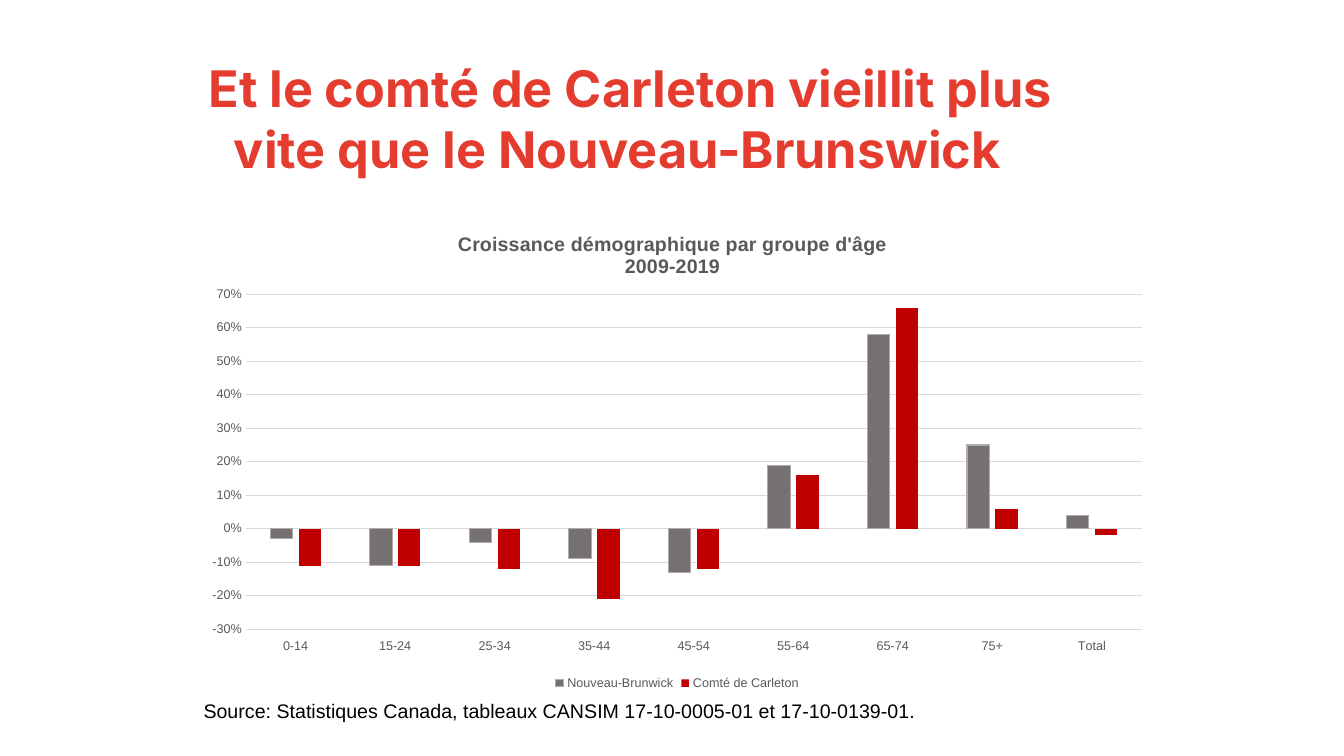
from lxml import etree
from pptx import Presentation
from pptx.chart import data as chart_data
from pptx.dml import color
from pptx.enum import chart as chart_enum, text as text_enum
from pptx.oxml import ns
from pptx.util import Cm, Pt

RED, GREY, LIGHT_GREY = "E43D30", "595959", "D9D9D9"
AGE_GROUPS = ["0-14", "15-24", "25-34", "35-44", "45-54", "55-64", "65-74", "75+", "Total"]
# name, fill, outline, growth 2009-2019
REGIONS = [
    ("Nouveau-Brunwick", "767171", "AFABAB",
     [-0.03, -0.11, -0.04, -0.09, -0.13, 0.19, 0.58, 0.25, 0.04]),
    ("Comté de Carleton", "C00000", None,
     [-0.11, -0.11, -0.12, -0.21, -0.12, 0.16, 0.66, 0.06, -0.02]),
]


def rgb(value):
    return color.RGBColor.from_string(value)


def style_font(font, name, size, colour, bold=False):
    font.name, font.size, font.bold = name, Pt(size), bold
    font.color.rgb = rgb(colour)


def style_line(line, colour):
    line.color.rgb = rgb(colour)
    line.width = Pt(0.75)


def add_run(paragraph, words, name, size, colour, bold=False):
    run = paragraph.add_run()
    run.text = words
    style_font(run.font, name, size, colour, bold)


def set_layout(parent, position, **values):
    """Place a chart part by fractions of the chart area."""
    for old in parent.findall(ns.qn("c:layout")):
        parent.remove(old)
    layout = etree.Element(ns.qn("c:layout"))
    manual = etree.SubElement(layout, ns.qn("c:manualLayout"))
    for tag, value in values.items():
        etree.SubElement(manual, ns.qn(f"c:{tag}")).set("val", str(value))
    parent.insert(position, layout)


def add_title(slide, words):
    title = slide.shapes.title
    title.left, title.top, title.width, title.height = Cm(4.37), Cm(1.32), Cm(24.66), Cm(3.94)
    frame = title.text_frame
    frame.word_wrap = True
    frame.auto_size = text_enum.MSO_AUTO_SIZE.NONE
    frame.vertical_anchor = text_enum.MSO_ANCHOR.TOP
    paragraph = frame.paragraphs[0]
    paragraph.alignment = text_enum.PP_ALIGN.LEFT
    # Hanging indent
    properties = paragraph._p.get_or_add_pPr()
    properties.set("marL", str(Cm(1.27)))
    properties.set("indent", str(-Cm(0.64)))
    add_run(paragraph, words, "Inter", 36, RED, bold=True)


def add_source(slide, words):
    box = slide.shapes.add_textbox(Cm(4.88), Cm(17.48), Cm(23.77), Cm(0.86))
    box.text_frame.word_wrap = True
    add_run(box.text_frame.paragraphs[0], words, "Arial", 14, "000000")


def add_chart_title(chart, lines):
    frame = chart.chart_title.text_frame
    for index, line in enumerate(lines):
        paragraph = frame.add_paragraph() if index else frame.paragraphs[0]
        paragraph.alignment = text_enum.PP_ALIGN.CENTER
        add_run(paragraph, line, "Arial", 14, GREY, bold=True)
    chart.chart_title.include_in_layout = False
    set_layout(chart.chart_title._element, 1, xMode="edge", yMode="edge", x=0.27, y=0.04)


def style_axes(chart):
    for axis in (chart.category_axis, chart.value_axis):
        axis.major_tick_mark = axis.minor_tick_mark = chart_enum.XL_TICK_MARK.NONE
        style_font(axis.tick_labels.font, "Arial", 9, GREY)
    chart.category_axis.tick_label_position = chart_enum.XL_TICK_LABEL_POSITION.LOW
    style_line(chart.category_axis.format.line, LIGHT_GREY)
    values = chart.value_axis
    values.minimum_scale, values.maximum_scale, values.major_unit = -0.3, 0.7, 0.1
    values.tick_labels.number_format = "0%"
    values.tick_labels.number_format_is_linked = False
    values.format.line.fill.background()
    style_line(values.major_gridlines.format.line, LIGHT_GREY)


def add_growth_chart(slide):
    data = chart_data.CategoryChartData(number_format="0%")
    data.categories = AGE_GROUPS
    for name, _, _, growth in REGIONS:
        data.add_series(name, growth)
    chart = slide.shapes.add_chart(
        chart_enum.XL_CHART_TYPE.COLUMN_CLUSTERED,
        Cm(4.88), Cm(5.26), Cm(24.38), Cm(12.24), data).chart
    style_font(chart.font, "Arial", 10, "000000")
    add_chart_title(chart, ["Croissance démographique par groupe d'âge", "2009-2019"])
    style_axes(chart)

    # Columns
    plot = chart.plots[0]
    plot.gap_width, plot.overlap, plot.vary_by_categories = 219, -27, False
    for series, (_, fill, outline, _) in zip(plot.series, REGIONS):
        series.invert_if_negative = False
        series.format.fill.solid()
        series.format.fill.fore_color.rgb = rgb(fill)
        if outline:
            style_line(series.format.line, outline)
        else:
            series.format.line.fill.background()
    plot_area = chart._chartSpace.chart.plotArea
    set_layout(plot_area, 0, layoutTarget="inner", xMode="edge", yMode="edge",
               x=0.054, y=0.176, w=0.926, h=0.69)

    # Legend
    chart.has_legend = True
    chart.legend.position = chart_enum.XL_LEGEND_POSITION.BOTTOM
    chart.legend.include_in_layout = False
    style_font(chart.legend.font, "Arial", 9, GREY)


def main():
    presentation = Presentation()
    presentation.slide_width, presentation.slide_height = Cm(33.87), Cm(19.05)
    slide = presentation.slides.add_slide(presentation.slide_layouts[5])
    add_title(slide, "Et le comté de Carleton vieillit plus vite que le Nouveau-Brunswick")
    add_source(slide, "Source: Statistiques Canada, tableaux CANSIM 17-10-0005-01 et 17-10-0139-01.")
    add_growth_chart(slide)
    presentation.save("out.pptx")


if __name__ == "__main__":
    main()
